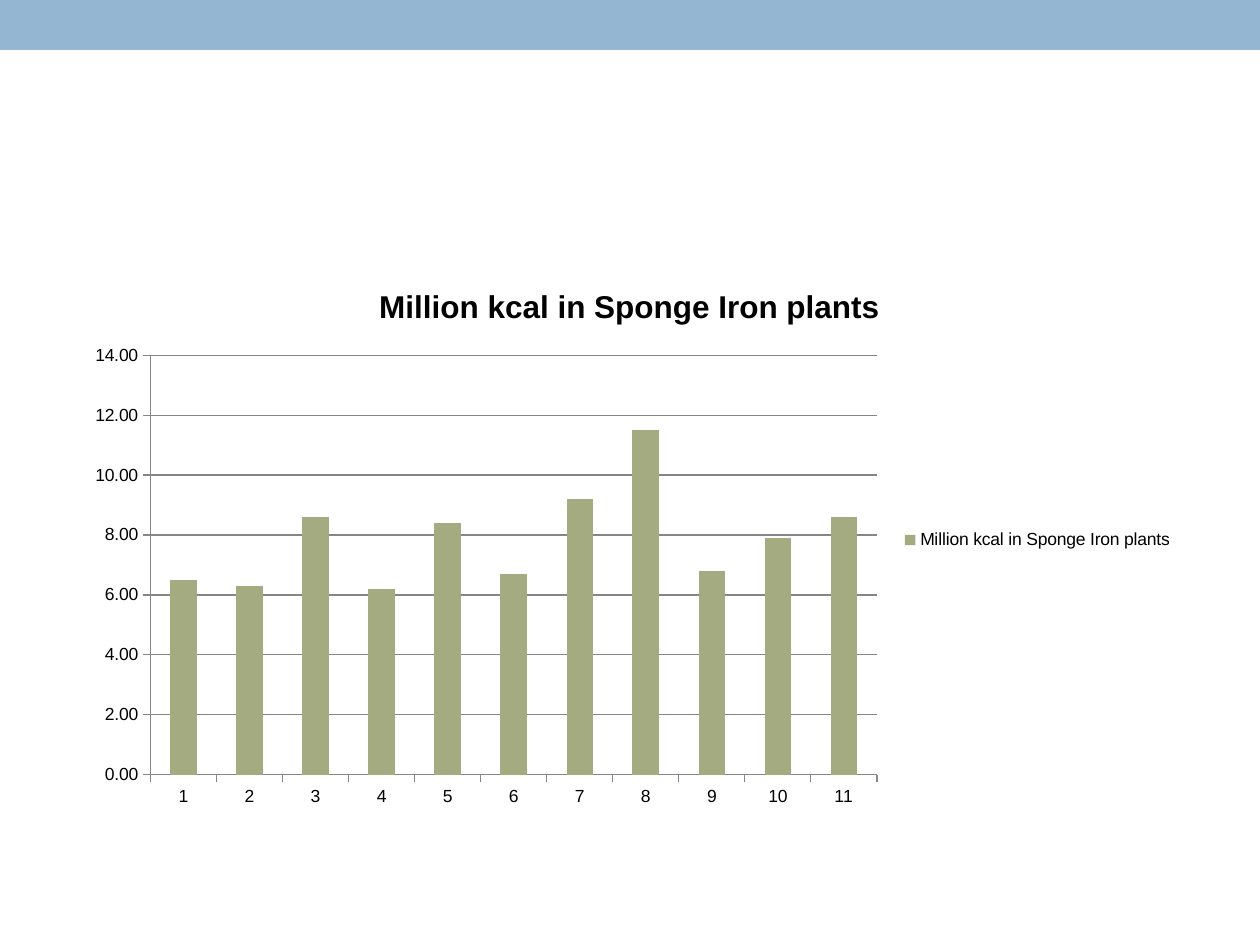
from dataclasses import dataclass

from pptx import Presentation
from pptx.chart.data import CategoryChartData
from pptx.dml.color import RGBColor
from pptx.enum.chart import XL_CHART_TYPE, XL_LEGEND_POSITION, XL_TICK_MARK
from pptx.enum.shapes import MSO_SHAPE
from pptx.util import Emu, Pt

CHART_TITLE = "Million kcal in Sponge Iron plants"
HEAT_VALUES = [6.5, 6.3, 8.6, 6.2, 8.4, 6.7, 9.2, 11.5, 6.8, 7.9, 8.6]
PLANTS = [str(number) for number in range(1, len(HEAT_VALUES) + 1)]

SLIDE_SIZE = (1260, 945)
BAND_BOX = (0, 0, 1260, 50)
CHART_BOX = (73, 262, 1113, 556)


@dataclass(frozen=True)
class Theme:
    font: str = "Arial"
    text: str = "000000"
    band: str = "94B6D2"
    column: str = "A5AB81"
    line: str = "868686"
    label_size: int = 10
    title_size: int = 18


THEME = Theme()


def px(value):
    return Emu(round(value * 914400 / 126))


def paint(fill, color):
    fill.solid()
    fill.fore_color.rgb = RGBColor.from_string(color)


def format_font(font, size=THEME.label_size, bold=False):
    font.name = THEME.font
    font.size = Pt(size)
    font.bold = bold
    font.color.rgb = RGBColor.from_string(THEME.text)


def write_text(text_frame, text, **font_format):
    text_frame.text = text
    format_font(text_frame.paragraphs[0].runs[0].font, **font_format)


def format_line(line):
    line.color.rgb = RGBColor.from_string(THEME.line)
    line.width = Pt(0.75)


def add_band(slide):
    band = slide.shapes.add_shape(MSO_SHAPE.RECTANGLE, *map(px, BAND_BOX))
    band.shadow.inherit = False
    paint(band.fill, THEME.band)
    band.line.fill.background()


def add_heat_chart(slide):
    data = CategoryChartData(number_format="0.00")
    data.categories = PLANTS
    data.add_series(CHART_TITLE, HEAT_VALUES)
    chart = slide.shapes.add_chart(
        XL_CHART_TYPE.COLUMN_CLUSTERED, *map(px, CHART_BOX), data
    ).chart
    format_font(chart.font)

    chart.has_title = True
    write_text(chart.chart_title.text_frame, CHART_TITLE,
               size=THEME.title_size, bold=True)
    chart.chart_title.include_in_layout = False

    chart.has_legend = True
    chart.legend.position = XL_LEGEND_POSITION.RIGHT
    chart.legend.include_in_layout = False

    plot = chart.plots[0]
    plot.gap_width = 150
    plot.vary_by_categories = False
    paint(plot.series[0].format.fill, THEME.column)

    for axis in (chart.category_axis, chart.value_axis):
        axis.major_tick_mark = XL_TICK_MARK.OUTSIDE
        axis.minor_tick_mark = XL_TICK_MARK.NONE
        format_line(axis.format.line)

    value_axis = chart.value_axis
    value_axis.minimum_scale = 0
    value_axis.maximum_scale = 14
    value_axis.major_unit = 2
    value_axis.tick_labels.number_format = "0.00"
    value_axis.tick_labels.number_format_is_linked = False
    value_axis.has_major_gridlines = True
    format_line(value_axis.major_gridlines.format.line)


def main():
    presentation = Presentation()
    presentation.slide_width, presentation.slide_height = map(px, SLIDE_SIZE)
    slide = presentation.slides.add_slide(presentation.slide_layouts[6])
    add_band(slide)
    add_heat_chart(slide)
    presentation.save("out.pptx")


if __name__ == "__main__":
    main()
